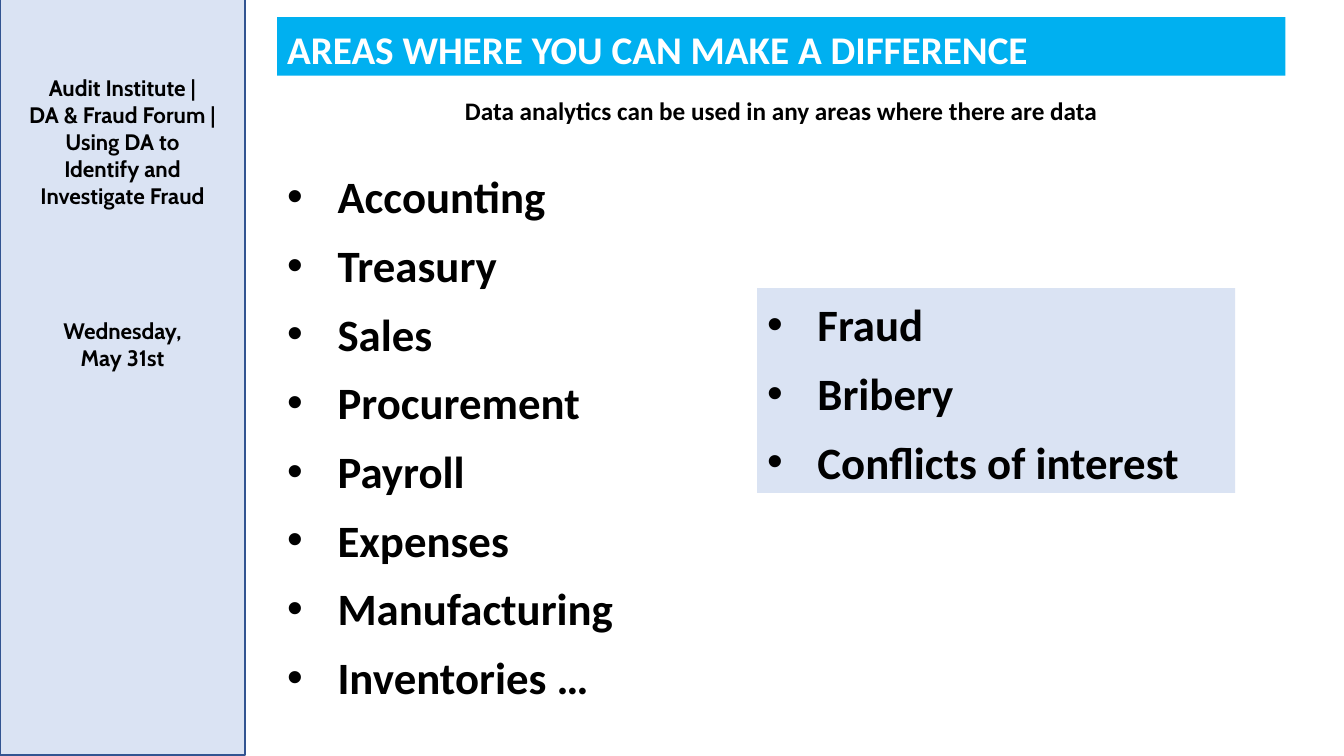
from lxml import etree
from pptx import Presentation
from pptx.dml.color import RGBColor
from pptx.enum import shapes, text
from pptx.oxml.ns import qn
from pptx.util import Inches, Pt

EVENT = ["Audit Institute |", "DA & Fraud Forum | Using DA to", "Identify and", "Investigate Fraud"]
DATE = ["Wednesday,", "May 31st"]
TITLE = ["AREAS WHERE YOU CAN MAKE A DIFFERENCE"]
SUBTITLE = ["Data analytics can be used in any areas where there are data"]
AREAS = ["Accounting", "Treasury", "Sales", "Procurement", "Payroll",
         "Expenses", "Manufacturing", "Inventories …"]
RISKS = ["Fraud", "Bribery", "Conflicts of interest"]

PALE_BLUE = "DAE3F3"
CENTER = text.PP_ALIGN.CENTER
LEFT = text.PP_ALIGN.LEFT
SIDEBAR_WIDTH = 2.43
CONTENT_LEFT = 2.75
CONTENT_WIDTH = 10


def color(value):
    return RGBColor.from_string(value)


def add_box(slide, place, fill=None, line=None):
    bounds = [Inches(value) for value in place]
    if fill is None:
        return slide.shapes.add_textbox(*bounds)
    shape = slide.shapes.add_shape(shapes.MSO_SHAPE.RECTANGLE, *bounds)
    shape.shadow.inherit = False
    shape.fill.solid()
    shape.fill.fore_color.rgb = color(fill)
    if line:
        shape.line.color.rgb = color(line)
        shape.line.width = Pt(1)
    else:
        shape.line.fill.background()
    return shape


def add_bullet(paragraph):
    properties = paragraph._p.get_or_add_pPr()
    properties.set("marL", str(Inches(0.5)))
    properties.set("indent", str(-Inches(0.5)))
    etree.SubElement(properties, qn("a:buFont")).set("typeface", "Arial")
    etree.SubElement(properties, qn("a:buChar")).set("char", "•")


def write(shape, lines, size, font="Calibri", ink="000000", align=LEFT, spaced=False, bullets=False):
    frame = shape.text_frame
    frame.word_wrap = True
    frame.vertical_anchor = text.MSO_ANCHOR.TOP
    frame.text = "\n".join(lines)
    for paragraph in frame.paragraphs:
        paragraph.alignment = align
        if spaced:
            paragraph.line_spacing = 1.07
            paragraph.space_after = Pt(8)
        if bullets:
            add_bullet(paragraph)
        for run in paragraph.runs:
            run.font.name = font
            run.font.size = Pt(size)
            run.font.bold = True
            run.font.color.rgb = color(ink)


def main():
    presentation = Presentation()
    presentation.slide_width = Inches(13.33)
    presentation.slide_height = Inches(7.5)
    slide = presentation.slides.add_slide(presentation.slide_layouts[6])

    add_box(slide, (0, -0.01, SIDEBAR_WIDTH, 7.5), PALE_BLUE, "325491")
    for lines, top, height in ((EVENT, 0.69, 1.45), (DATE, 3.1, 0.64)):
        write(add_box(slide, (0, top, SIDEBAR_WIDTH, height)), lines, 16, "Cabin", align=CENTER)

    areas = add_box(slide, (CONTENT_LEFT, 1.59, 6.67, 5.47))
    write(areas, AREAS, 32, spaced=True, bullets=True)
    title = add_box(slide, (CONTENT_LEFT, 0.17, CONTENT_WIDTH, 0.58), "00B0F0")
    write(title, TITLE, 28, ink="FFFFFF", align=text.PP_ALIGN.JUSTIFY, spaced=True)
    subtitle = add_box(slide, (CONTENT_LEFT, 0.9, CONTENT_WIDTH, 0.4))
    write(subtitle, SUBTITLE, 18, align=CENTER)
    risks = add_box(slide, (7.51, 2.86, 4.74, 2.03), PALE_BLUE)
    write(risks, RISKS, 32, spaced=True, bullets=True)

    presentation.save("out.pptx")


if __name__ == "__main__":
    main()
